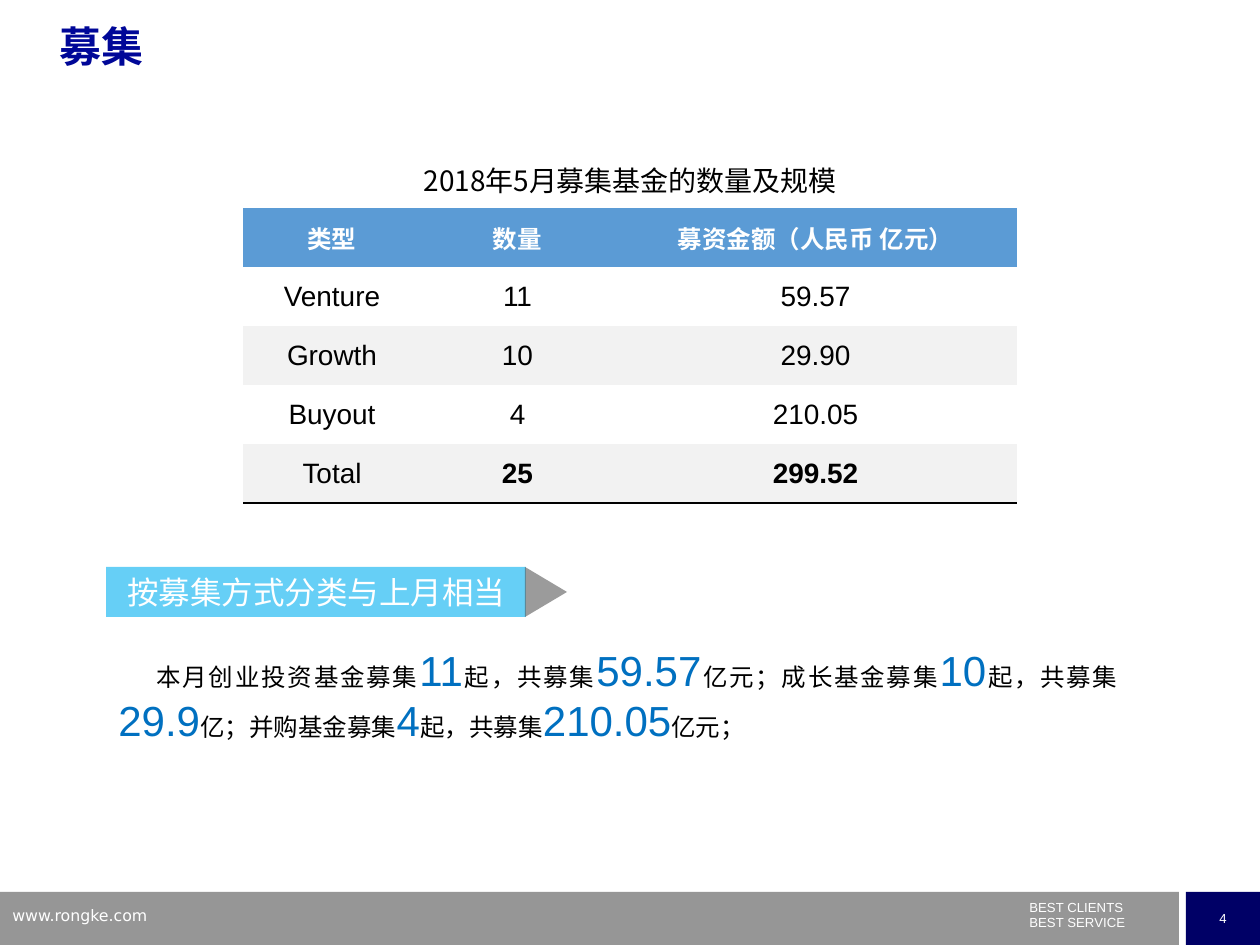
from lxml.etree import SubElement
from pptx import Presentation
from pptx.dml.color import RGBColor
from pptx.enum.shapes import MSO_SHAPE as SHAPE
from pptx.enum.text import MSO_ANCHOR as ANCHOR, PP_ALIGN as ALIGN
from pptx.oxml.ns import qn
from pptx.util import Emu, Pt

PX = 914400 / 126
HAN = "Noto Sans CJK SC"


def px(*lengths):
    return [Emu(round(length * PX)) for length in lengths]


def write(para, text, size=16, font="Arial", color="000000", bold=False, align=None):
    span = para.add_run()
    span.text = text
    span.font.size, span.font.name, span.font.bold = Pt(size), font, bold
    span.font.color.rgb = RGBColor.from_string(color)
    east_asian = font if "CJK" in font else HAN
    SubElement(span.font._element, qn("a:ea"), typeface=east_asian)
    if align is not None:
        para.alignment = align


deck = Presentation()
deck.slide_width, deck.slide_height = px(1260, 945)
page = deck.slides.add_slide(deck.slide_layouts[5])
shapes = page.shapes

# Title
title = shapes.title
title.left, title.top, title.width, title.height = px(47, 20, 1134, 88)
title.text_frame.vertical_anchor = ANCHOR.TOP
title_para = title.text_frame.paragraphs[0]
title_para.line_spacing = 0.9
write(title_para, "募集", size=24, color="000798", bold=True, align=ALIGN.LEFT)

# Filled shapes: footer bars, then the grouped heading banner
banner = shapes.add_group_shape()
filled = []
for parent, kind, bounds, color, alpha in [
    (shapes, SHAPE.RECTANGLE, (0, 892, 1179, 53), "969696", 100),
    (shapes, SHAPE.RECTANGLE, (1186, 892, 74, 53), "000066", 100),
    (banner.shapes, SHAPE.RECTANGLE, (106, 567, 420, 50), "00B0F0", 60),
    (banner.shapes, SHAPE.ISOSCELES_TRIANGLE, (521, 571, 50, 42), "595959", 60),
]:
    shape = parent.add_shape(kind, *px(*bounds))
    shape.shadow.inherit = False
    shape.line.fill.background()
    shape.fill.solid()
    shape.fill.fore_color.rgb = RGBColor.from_string(color)
    if alpha < 100:
        tint = shape.fill._xPr.find(".//" + qn("a:srgbClr"))
        SubElement(tint, qn("a:alpha"), val=str(alpha * 1000))
    shape.text_frame.vertical_anchor = ANCHOR.MIDDLE
    filled.append(shape)
footer_bar, number_box, heading, arrow = filled
arrow.rotation = 90
number_box.text_frame.word_wrap = False
write(number_box.text_frame.paragraphs[0], "4", size=7.5, color="FFFFFF", align=ALIGN.CENTER)
write(heading.text_frame.paragraphs[0], "按募集方式分类与上月相当", size=18, font=HAN,
      color="FFFFFF", align=ALIGN.CENTER)

# Footer texts
slogan = shapes.add_textbox(*px(1017, 900, 189, 37)).text_frame
slogan.word_wrap = True
first, second = slogan.paragraphs[0], slogan.add_paragraph()
second.space_before = Pt(4)
for para, text in [(first, "BEST CLIENTS"), (second, "BEST SERVICE")]:
    para.line_spacing = 0.5
    write(para, text, size=7.5, color="FFFFFF")

website = shapes.add_textbox(*px(0, 900, 302, 33)).text_frame
website.word_wrap = True
write(website.paragraphs[0], "www.rongke.com", size=9, font="DejaVu Sans", color="FFFFFF")

# Table of funds raised
rows = [
    ["2018年5月募集基金的数量及规模", "", ""],
    ["类型", "数量", "募资金额（人民币 亿元）"],
    ["Venture", "11", "59.57"],
    ["Growth", "10", "29.90"],
    ["Buyout", "4", "210.05"],
    ["Total", "25", "299.52"],
]
row_fills = [None, "5B9BD5", None, "F2F2F2", None, "F2F2F2"]
last = len(rows) - 1
table = shapes.add_table(len(rows), 3, *px(243, 149, 774, 354)).table
table.first_row = table.horz_banding = False
NO_STYLE = "{2D5ABB26-0587-4C30-8999-92F81FD0307C}"
table._tbl.tblPr.find(qn("a:tableStyleId")).text = NO_STYLE
for column, width in zip(table.columns, px(178, 193, 403)):
    column.width = width
table.cell(0, 0).merge(table.cell(0, 2))

for r, (values, fill) in enumerate(zip(rows, row_fills)):
    table.rows[r].height = px(59)[0]
    for c, value in enumerate(values):
        cell = table.cell(r, c)
        cell.vertical_anchor = ANCHOR.MIDDLE
        cell.margin_left, cell.margin_top, cell.margin_right, cell.margin_bottom = px(1, 1, 1, 0)
        if r == last:
            border = SubElement(cell._tc.get_or_add_tcPr(), qn("a:lnB"), w=str(Pt(1)))
            SubElement(SubElement(border, qn("a:solidFill")), qn("a:srgbClr"), val="000000")
        if fill:
            cell.fill.solid()
            cell.fill.fore_color.rgb = RGBColor.from_string(fill)
        else:
            cell.fill.background()
        para = cell.text_frame.paragraphs[0]
        if r == 1:
            write(para, value, size=14, font=HAN, color="FFFFFF", bold=True, align=ALIGN.CENTER)
        elif value:
            write(para, value, font="Noto Sans CJK JP" if r == 0 else "Arial",
                  bold=r == last and c > 0, align=ALIGN.CENTER)

# Summary sentence with highlighted figures
summary = shapes.add_textbox(*px(106, 638, 1024, 115)).text_frame
summary.word_wrap = True
summary_para = summary.paragraphs[0]
summary_para.alignment = ALIGN.JUSTIFY
summary_para._p.get_or_add_pPr().set("indent", str(px(38)[0]))
for words, figure in [
    ("本月创业投资基金募集", "11"), ("起，共募集", "59.57"),
    ("亿元；成长基金募集", "10"), ("起，共募集", "29.9"),
    ("亿；并购基金募集", "4"), ("起，共募集", "210.05"), ("亿元；", ""),
]:
    write(summary_para, words, size=14, font=HAN)
    if figure:
        write(summary_para, figure, size=24, color="0070C0")

deck.save("out.pptx")
